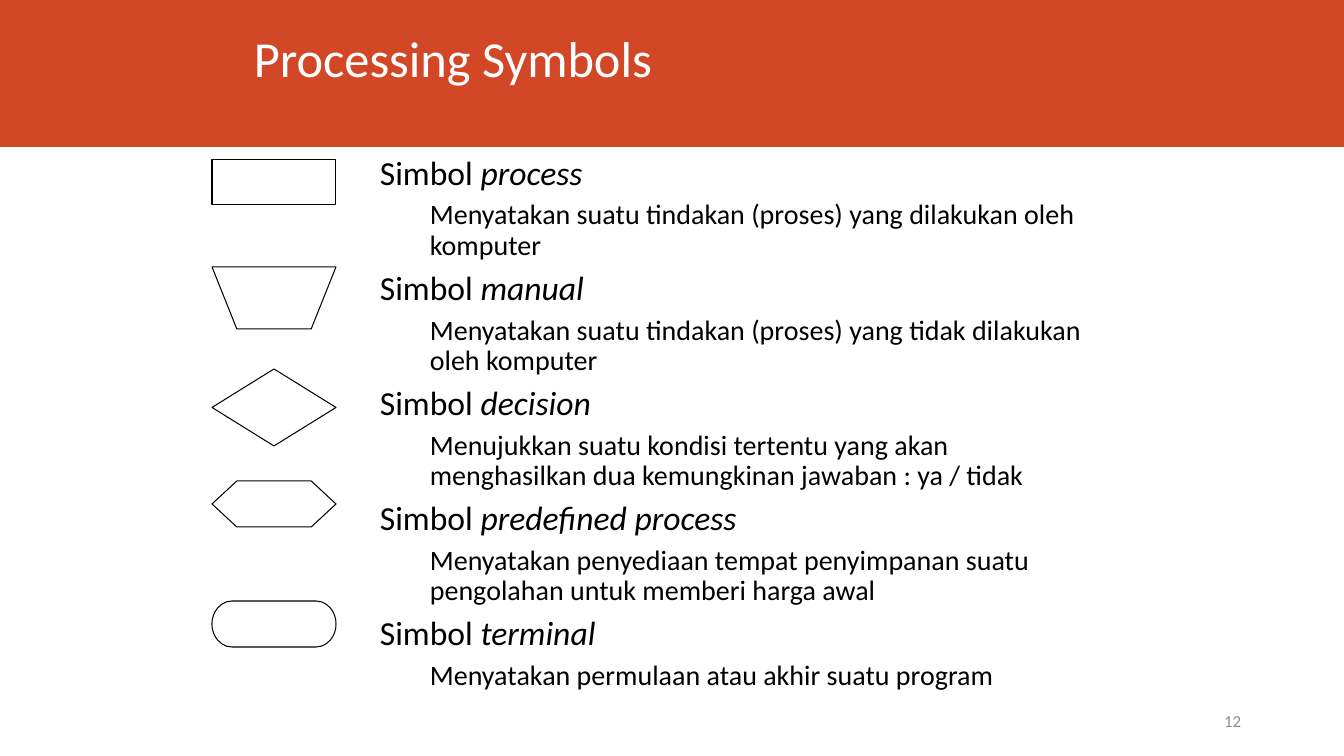
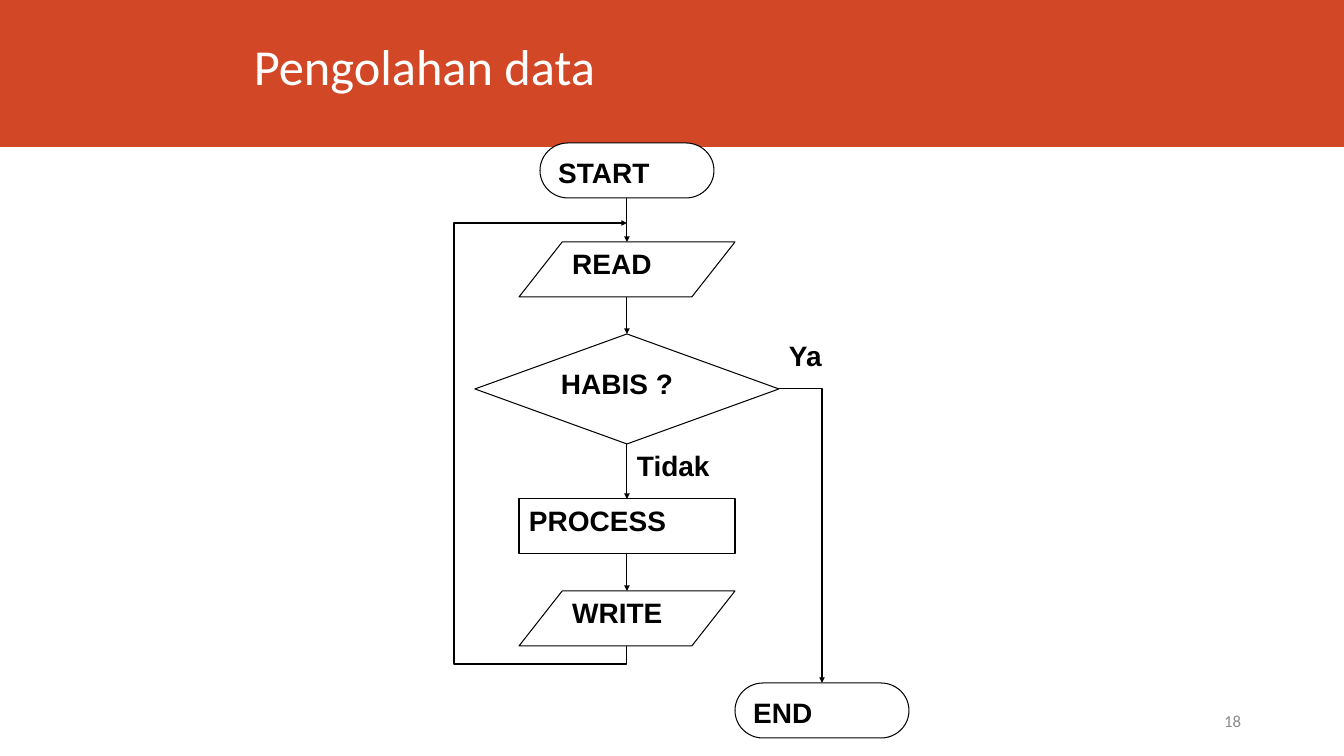
from dataclasses import dataclass

from lxml.etree import SubElement
from pptx import Presentation
from pptx.dml.color import RGBColor
from pptx.enum.shapes import MSO_CONNECTOR, MSO_SHAPE
from pptx.enum.text import MSO_ANCHOR, PP_ALIGN
from pptx.oxml.ns import qn
from pptx.util import Pt


@dataclass(frozen=True)
class Theme:
    band: RGBColor = RGBColor(0xD2, 0x47, 0x26)
    paper: RGBColor = RGBColor(0xFF, 0xFF, 0xFF)
    ink: RGBColor = RGBColor(0x00, 0x00, 0x00)
    muted: RGBColor = RGBColor(0x8C, 0x8C, 0x8C)
    text_font: str = "Calibri"
    chart_font: str = "Arial"
    title_size: int = 36
    heading_size: int = 24
    detail_size: int = 20
    number_size: int = 12
    outline: float = 0.75


@dataclass(frozen=True)
class Box:
    left: int
    top: int
    width: int
    height: int

    @property
    def right(self):
        return self.left + self.width

    @property
    def bottom(self):
        return self.top + self.height

    @property
    def center(self):
        return self.left + self.width // 2

    @property
    def middle(self):
        return self.top + self.height // 2

    def emu(self):
        return [px(n) for n in (self.left, self.top, self.width, self.height)]


THEME = Theme()
PAGE = Box(0, 0, 1344, 756)
BAND = Box(0, 0, 1344, 147)
NUMBER = Box(890, 701, 361, 40)
SYMBOLS = Box(212, 159, 124, 488)
MEANINGS = Box(370, 151, 731, 563)
FLOW = Box(454, 143, 455, 596)

SYMBOL_SHAPES = [
    (MSO_SHAPE.RECTANGLE, 0, 46),
    (MSO_SHAPE.FLOWCHART_MANUAL_OPERATION, 108, 62),
    (MSO_SHAPE.FLOWCHART_DECISION, 210, 77),
    (MSO_SHAPE.FLOWCHART_PREPARATION, 322, 46),
    (MSO_SHAPE.FLOWCHART_TERMINATOR, 442, 46),
]
SYMBOL_MEANINGS = [
    ("process", "Menyatakan suatu tindakan (proses) yang dilakukan oleh komputer"),
    ("manual", "Menyatakan suatu tindakan (proses) yang tidak dilakukan oleh komputer"),
    ("decision", "Menujukkan suatu kondisi tertentu yang akan menghasilkan dua kemungkinan jawaban : ya / tidak"),
    ("predefined process", "Menyatakan penyediaan tempat penyimpanan suatu pengolahan untuk memberi harga awal"),
    ("terminal", "Menyatakan permulaan atau akhir suatu program"),
]


def px(length):
    return round(length * 12192000 / 1344)


def style_font(font, name, size, color, bold=False):
    font.name = name
    font.size = Pt(size)
    font.color.rgb = color
    font.bold = bold


def add_text_box(page, box, anchor=MSO_ANCHOR.TOP):
    frame = page.shapes.add_textbox(*box.emu()).text_frame
    frame.word_wrap = True
    frame.vertical_anchor = anchor
    return frame


def add_label(page, box, text, name, size, color, anchor=MSO_ANCHOR.TOP, bold=False, align=PP_ALIGN.LEFT):
    para = add_text_box(page, box, anchor).paragraphs[0]
    para.text = text
    para.alignment = align
    style_font(para.font, name, size, color, bold)


def add_outlined(page, kind, box):
    shape = page.shapes.add_shape(kind, *box.emu())
    shape.shadow.inherit = False
    shape.fill.solid()
    shape.fill.fore_color.rgb = THEME.paper
    shape.line.color.rgb = THEME.ink
    shape.line.width = Pt(THEME.outline)
    return shape


def add_page(deck, title, title_height, number):
    page = deck.slides.add_slide(deck.slide_layouts[6])
    band = page.shapes.add_shape(MSO_SHAPE.RECTANGLE, *BAND.emu())
    band.shadow.inherit = False
    band.fill.solid()
    band.fill.fore_color.rgb = THEME.band
    band.line.fill.background()
    add_label(page, NUMBER, number, THEME.text_font, THEME.number_size, THEME.muted,
              MSO_ANCHOR.MIDDLE, align=PP_ALIGN.RIGHT)
    add_label(page, Box(244, 17, 857, title_height), title, THEME.text_font,
              THEME.title_size, THEME.paper, MSO_ANCHOR.BOTTOM)
    return page


def add_symbols(page, box):
    for kind, offset, height in SYMBOL_SHAPES:
        add_outlined(page, kind, Box(box.left, box.top + offset, box.width, height))


def set_spacing(para, indent):
    para.line_spacing = 0.9
    properties = para._p.get_or_add_pPr()
    properties.set("marL", str(px(indent)))
    properties.set("indent", "0")
    before = SubElement(properties, qn("a:spcBef"))
    SubElement(before, qn("a:spcPct")).set("val", "30000")


def add_meanings(page, box):
    frame = add_text_box(page, box)
    for index, (symbol, meaning) in enumerate(SYMBOL_MEANINGS):
        heading = frame.add_paragraph() if index else frame.paragraphs[0]
        set_spacing(heading, 0)
        style_font(heading.font, THEME.text_font, THEME.heading_size, THEME.ink)
        heading.add_run().text = "Simbol "
        span = heading.add_run()
        span.text = symbol
        span.font.italic = True
        detail = frame.add_paragraph()
        set_spacing(detail, 50)
        detail.text = meaning
        style_font(detail.font, THEME.text_font, THEME.detail_size, THEME.ink)


def add_node(page, kind, box, text):
    node = add_outlined(page, kind, box)
    frame = node.text_frame
    frame.word_wrap = True
    frame.vertical_anchor = MSO_ANCHOR.TOP
    para = frame.paragraphs[0]
    para.text = text
    para.alignment = PP_ALIGN.LEFT
    style_font(para.font, THEME.chart_font, THEME.detail_size, THEME.ink, True)
    return node


def finish_arrow(arrow):
    arrow.line.color.rgb = THEME.ink
    arrow.line.width = Pt(THEME.outline)
    head = SubElement(arrow.line._get_or_add_ln(), qn("a:tailEnd"))
    for key, value in (("type", "triangle"), ("w", "sm"), ("len", "sm")):
        head.set(key, value)


def add_arrow(page, upper, upper_box, lower, lower_box):
    arrow = page.shapes.add_connector(
        MSO_CONNECTOR.STRAIGHT, px(upper_box.center), px(upper_box.bottom),
        px(lower_box.center), px(lower_box.top))
    slanted = MSO_SHAPE.FLOWCHART_DATA
    if upper.auto_shape_type != slanted:
        arrow.begin_connect(upper, 2)
    if lower.auto_shape_type != slanted:
        arrow.end_connect(lower, 0)
    finish_arrow(arrow)
    SubElement(arrow._element.spPr, qn("a:effectLst"))


def add_bent_arrow(page, points):
    corners = [(px(x), px(y)) for x, y in points]
    builder = page.shapes.build_freeform(*corners[0])
    builder.add_line_segments(corners[1:], close=False)
    arrow = builder.convert_to_shape()
    arrow.shadow.inherit = False
    arrow.fill.background()
    finish_arrow(arrow)


def add_flow(page, box):
    axis = box.left + 173
    height, step = 55, 92

    def centered(offset, width, tall=height, shift=0):
        return Box(axis + shift - width // 2, box.top + offset, width, tall)

    start = centered(0, 174)
    read = centered(99, 216)
    check = centered(99 + step, 304, 2 * height)
    process = centered(356, 216)
    write = centered(356 + step, 216)
    end = centered(356 + 2 * step, 174, shift=195)

    chain = [
        (MSO_SHAPE.FLOWCHART_TERMINATOR, start, "START"),
        (MSO_SHAPE.FLOWCHART_DATA, read, "READ"),
        (MSO_SHAPE.FLOWCHART_DECISION, check, "HABIS ?"),
        (MSO_SHAPE.FLOWCHART_PROCESS, process, "PROCESS"),
        (MSO_SHAPE.FLOWCHART_DATA, write, "WRITE"),
    ]
    nodes = [(add_node(page, *item), item[1]) for item in chain]
    for upper, lower in zip(nodes, nodes[1:]):
        add_arrow(page, *upper, *lower)
    add_node(page, MSO_SHAPE.FLOWCHART_TERMINATOR, end, "END")

    turn, back = write.bottom + 18, read.top - 19
    add_bent_arrow(page, [(axis, write.bottom), (axis, turn), (box.left, turn),
                          (box.left, back), (axis, back)])
    add_bent_arrow(page, [(check.right, check.middle), (end.center, check.middle),
                          (end.center, end.top)])
    for text, left, top, width in (("Tidak", axis, check.bottom, 130),
                                   ("Ya", check.right, check.top, 87)):
        add_label(page, Box(left, top, width, height), text, THEME.chart_font,
                  THEME.detail_size, THEME.ink, bold=True)


def main():
    deck = Presentation()
    deck.slide_width = px(PAGE.width)
    deck.slide_height = px(PAGE.height)
    symbols_page = add_page(deck, "Processing Symbols", 76, "12")
    add_meanings(symbols_page, MEANINGS)
    add_symbols(symbols_page, SYMBOLS)
    flow_page = add_page(deck, "Pengolahan data", 84, "18")
    add_flow(flow_page, FLOW)
    deck.save("out.pptx")


if __name__ == "__main__":
    main()
